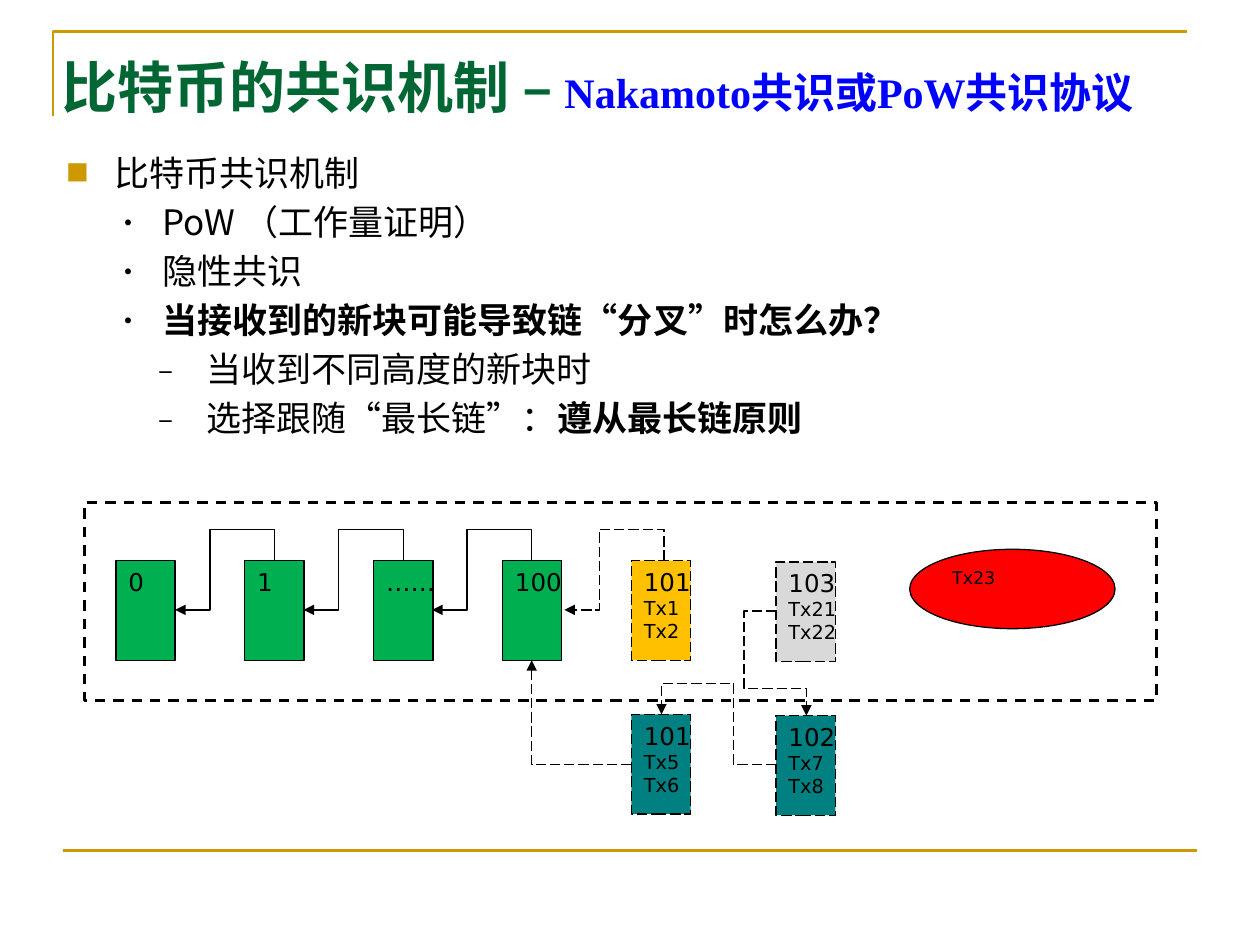
from lxml import etree
from pptx import Presentation
from pptx.dml.color import RGBColor
from pptx.enum.dml import MSO_LINE
from pptx.enum.shapes import MSO_CONNECTOR, MSO_SHAPE
from pptx.enum.text import MSO_ANCHOR, PP_ALIGN
from pptx.oxml.ns import qn
from pptx.util import Inches, Pt

CJK, SERIF, SANS = "Noto Sans CJK SC", "Times New Roman", "DejaVu Sans"
BLACK, GOLD, GREEN, TEAL = "000000", "CC9900", "00B050", "008080"


def color(value):
    return RGBColor.from_string(value)


def add_xml(parent, tag, **attrs):
    return etree.SubElement(parent, qn(tag), {k: str(v) for k, v in attrs.items()})


class SlideBuilder:
    """Style and drawing methods for one slide."""

    block_w, block_h = 0.47, 0.79

    def __init__(self, slide):
        self.shapes = slide.shapes

    def line_style(self, line, value=BLACK, width=0.75, dash=None):
        line.color.rgb = color(value)
        line.width = Pt(width)
        if dash:
            line.dash_style = dash

    def run(self, p, text, size, font, value=BLACK, bold=False):
        r = p.add_run()
        r.text = text
        r.font.size, r.font.name, r.font.bold = Pt(size), font, bold
        r.font.color.rgb = color(value)
        add_xml(r._r.get_or_add_rPr(), "a:ea", typeface=CJK)

    def text_box(self, x, y, w, h, anchor=MSO_ANCHOR.TOP):
        sp = self.shapes.add_textbox(Inches(x), Inches(y), Inches(w), Inches(h))
        tf = sp.text_frame
        tf.word_wrap = True
        tf.vertical_anchor = anchor
        return tf

    def bullet(self, p, char, indent, size, value=None):
        p.space_before, p.line_spacing = Pt(4), Pt(24)
        pPr = p._p.get_or_add_pPr()
        pPr.set("marL", str(Inches(indent)))
        pPr.set("indent", str(Inches(-0.38)))
        if value:
            add_xml(add_xml(pPr, "a:buClr"), "a:srgbClr", val=value)
        add_xml(pPr, "a:buSzPct", val=size * 1000)
        add_xml(pPr, "a:buFont", typeface=CJK)
        add_xml(pPr, "a:buChar", char=char)

    def shape(self, kind, x, y, w, h, fill=None, width=0.75, dash=None):
        sp = self.shapes.add_shape(kind, Inches(x), Inches(y), Inches(w), Inches(h))
        sp.shadow.inherit = False
        if fill:
            sp.fill.solid()
            sp.fill.fore_color.rgb = color(fill)
        else:
            sp.fill.background()
        self.line_style(sp.line, width=width, dash=dash)
        return sp

    def label(self, sp, lines):
        """Write (text, size) lines from the top left of a shape."""
        tf = sp.text_frame
        tf.word_wrap = False
        tf.vertical_anchor = MSO_ANCHOR.TOP
        for i, (text, size) in enumerate(lines):
            p = tf.add_paragraph() if i else tf.paragraphs[0]
            p.alignment = PP_ALIGN.LEFT
            self.run(p, text, size, SANS)

    def block(self, x, y, fill, height, *txs, dash=None):
        sp = self.shape(MSO_SHAPE.RECTANGLE, x, y, self.block_w, self.block_h, fill, dash=dash)
        self.label(sp, [(height, 14)] + [(tx, 11) for tx in txs])

    def line(self, x1, y1, x2, y2, kind=MSO_CONNECTOR.STRAIGHT, **style):
        cxn = self.shapes.add_connector(kind, Inches(x1), Inches(y1), Inches(x2), Inches(y2))
        self.line_style(cxn.line, **style)
        add_xml(cxn._element.spPr, "a:effectLst")
        return cxn

    def bent_arrow(self, x, y, w, h, rotation, flip=False, bends=(), dash=None):
        """Elbow arrow in an unrotated box; bends are fractions of its size."""
        cxn = self.line(x, y, x + w, y + h, MSO_CONNECTOR.ELBOW, dash=dash)
        add_xml(cxn.line._get_or_add_ln(), "a:tailEnd", type="triangle")
        spPr = cxn._element.spPr
        xfrm = spPr.find(qn("a:xfrm"))
        xfrm.set("rot", str(rotation * 60000))
        if flip:
            xfrm.set("flipH", "1")
            xfrm.set("flipV", "1")
        geom = spPr.find(qn("a:prstGeom"))
        geom.set("prst", f"bentConnector{len(bends) + 2}")
        guides = geom.find(qn("a:avLst"))
        for i, bend in enumerate(bends, 1):
            add_xml(guides, "a:gd", name=f"adj{i}", fmla=f"val {round(bend * 100000)}")

    def corner_rule(self, points):
        (x, y), *rest = [(Inches(a), Inches(b)) for a, b in points]
        builder = self.shapes.build_freeform(x, y)
        builder.add_line_segments(rest, close=False)
        sp = builder.convert_to_shape()
        sp.shadow.inherit = False
        sp.fill.background()
        self.line_style(sp.line, GOLD, 1.5)


def add_text(s):
    bullets = [
        ("■", 0.38, 65, GOLD, [("比特币共识机制", False)]),
        ("•", 0.76, 80, None, [("PoW （工作量证明）", False)]),
        ("•", 0.76, 80, None, [("隐性共识", False)]),
        ("•", 0.76, 80, None, [("当接收到的新块可能导致链“分叉”时怎么办？", True)]),
        ("–", 1.11, 80, None, [("当收到不同高度的新块时", False)]),
        ("–", 1.11, 80, None, [("选择跟随“最长链”：", False), ("遵从最长链原则", True)]),
    ]
    tf = s.text_box(0.43, 1.15, 9.06, 5.91)
    for i, (char, indent, size, value, runs) in enumerate(bullets):
        p = tf.add_paragraph() if i else tf.paragraphs[0]
        s.bullet(p, char, indent, size, value)
        for text, bold in runs:
            s.run(p, text, 20, CJK, bold=bold)

    p = s.text_box(0.39, 0.29, 9.16, 0.71, MSO_ANCHOR.BOTTOM).paragraphs[0]
    s.run(p, "比特币的共识机制 –", 32, SERIF, "006633", True)
    s.run(p, " ", 28, SERIF, "006633", True)
    s.run(p, "Nakamoto共识或PoW共识协议", 24, SERIF, "0000FF", True)


def add_chain(s):
    dash = MSO_LINE.LONG_DASH
    left, pitch, top, fork_top = 0.92, 1.023, 4.45, 5.67
    fork_x, far_x = left + 4 * pitch, 6.16

    for i, height in enumerate(["0", "1", "……", "100"]):
        s.block(left + i * pitch, top, GREEN, height)
    s.block(fork_x, top, "FFC000", "101", "Tx1", "Tx2", dash=dash)
    for x, style in [(1.59, None), (2.61, None), (3.63, None), (4.68, dash)]:
        s.bent_arrow(x, 4.25, 0.39, 0.79, 270, True, (-0.64, 0.65), style)

    pool = s.shape(MSO_SHAPE.OVAL, 7.22, 4.36, 1.63, 0.63, "FF0000")
    s.label(pool, [("Tx23", 10)])
    s.shape(MSO_SHAPE.RECTANGLE, 0.67, 3.99, 8.51, 1.57, width=1.5, dash=MSO_LINE.DASH)

    s.block(fork_x, fork_top, TEAL, "101", "Tx5", "Tx6", dash=dash)
    s.block(far_x, top + 0.01, "D9D9D9", "103", "Tx21", "Tx22", dash=dash)
    s.block(far_x, fork_top + 0.01, TEAL, "102", "Tx7", "Tx8", dash=dash)
    s.bent_arrow(4.22, 5.24, 0.79, 0.83, 180, dash=dash)
    s.bent_arrow(5.25, 5.67, 0.91, 0.4, 180, bends=(0.37, 1.62), dash=dash)
    s.bent_arrow(6.16, 4.85, 0.24, 0.83, 180, True, (-1.06, 0.74), dash)


def main():
    prs = Presentation()
    prs.slide_width, prs.slide_height = Inches(10), Inches(7.5)
    s = SlideBuilder(prs.slides.add_slide(prs.slide_layouts[6]))
    s.corner_rule([(0.42, 0.92), (0.42, 0.25), (9.42, 0.25)])
    s.line(0.5, 6.75, 9.5, 6.75, value=GOLD, width=1.5)
    add_text(s)
    add_chain(s)
    prs.save("out.pptx")


if __name__ == "__main__":
    main()
